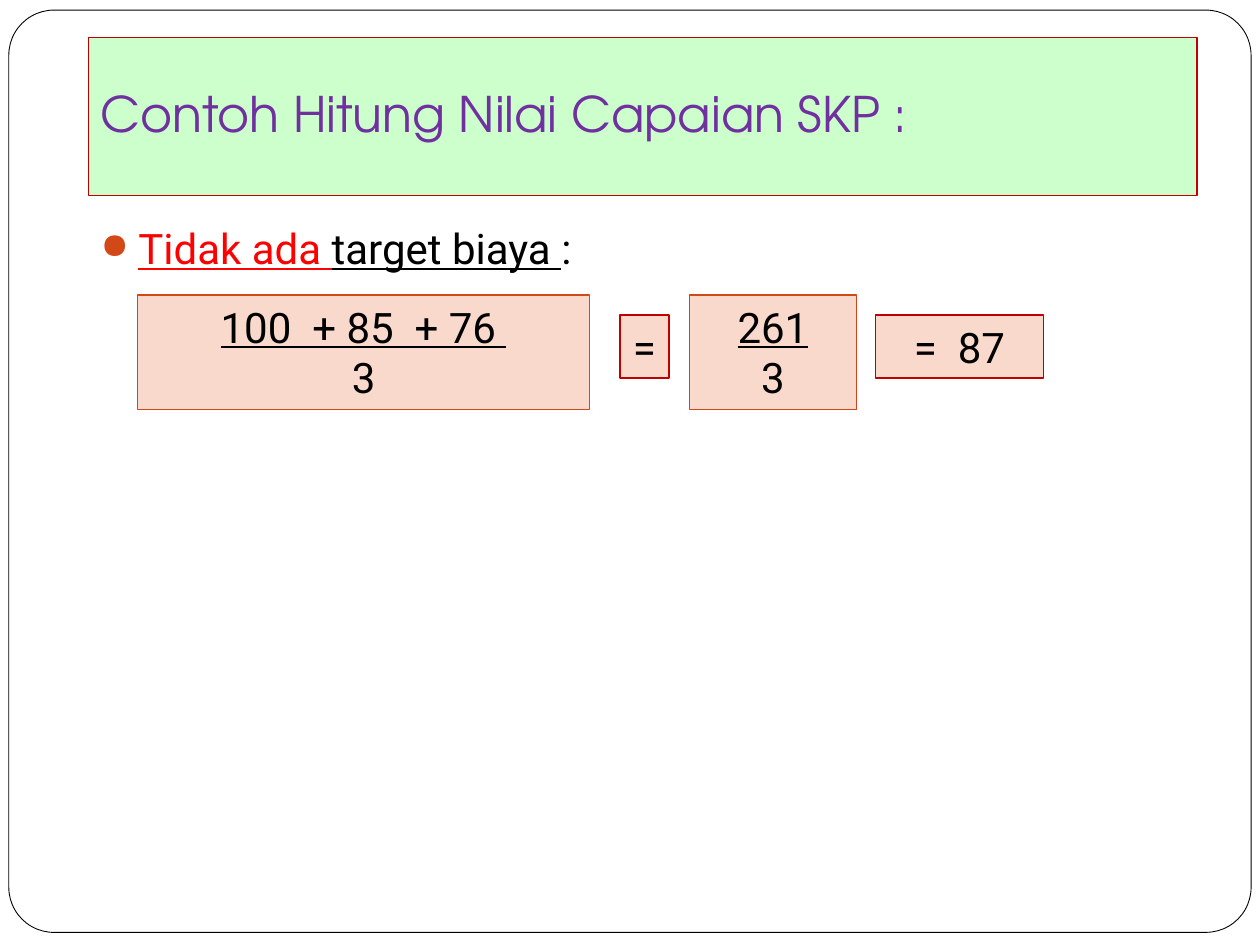
"""Build the slide that works out an SKP score without a cost target."""
from dataclasses import dataclass

from lxml import etree
from pptx import Presentation
from pptx.dml.color import RGBColor
from pptx.enum import shapes, text
from pptx.oxml import ns
from pptx.util import Pt

INK = {"white": "FFFFFF", "black": "000000", "mint": "CCFFCC", "wine": "C00000",
       "plum": "7030A0", "peach": "FAD9CD", "rust": "D34817", "red": "FF0000"}
SANS, HEAD = "Roboto", "TeX Gyre Adventor"


@dataclass
class Box:
    left: float
    top: float
    width: float
    height: float
    fill: str
    edge: str
    words: str = ""
    line: float = 0.75
    kind: int = shapes.MSO_SHAPE.RECTANGLE


def rgb(name: str) -> RGBColor:
    """Return the named colour."""
    return RGBColor.from_string(INK[name])


def style(run, size: float, ink: str, face: str = SANS, under: bool = False) -> None:
    """Set the look of one run."""
    font = run.font
    font.size, font.name, font.underline = Pt(size), face, under
    font.color.rgb = rgb(ink)


def draw(slide, box: Box):
    """Draw a filled, outlined box and return its shape."""
    shape = slide.shapes.add_shape(
        box.kind, Pt(box.left), Pt(box.top), Pt(box.width), Pt(box.height))
    shape.shadow.inherit = False
    shape.fill.solid()
    shape.fill.fore_color.rgb = rgb(box.fill)
    shape.line.color.rgb = rgb(box.edge)
    shape.line.width = Pt(box.line)
    return shape


def term(slide, box: Box) -> None:
    """Draw one term; a term of two lines is a fraction with a ruled top."""
    frame = draw(slide, box).text_frame
    frame.word_wrap = True
    frame.text = box.words
    split = len(frame.paragraphs) > 1
    frame.vertical_anchor = text.MSO_ANCHOR.TOP if split else text.MSO_ANCHOR.MIDDLE
    for row, para in enumerate(frame.paragraphs):
        para.alignment = text.PP_ALIGN.CENTER
        style(para.runs[0], 24, "black", under=split and row == 0)


def title(slide, box: Box) -> None:
    """Draw the title band."""
    frame = draw(slide, box).text_frame
    frame.word_wrap = True
    frame.margin_bottom = Pt(7.2)
    frame.vertical_anchor = text.MSO_ANCHOR.MIDDLE
    frame.text = box.words
    para = frame.paragraphs[0]
    para.alignment = text.PP_ALIGN.LEFT
    style(para.runs[0], 28, "plum", HEAD)


def bullet(para, ink: str, size: int, indent: float) -> None:
    """Give a paragraph a round bullet with a hanging indent."""
    props = para._p.get_or_add_pPr()
    props.set("marL", str(Pt(indent)))
    props.set("indent", str(-Pt(indent)))
    tint = etree.SubElement(props, ns.qn("a:buClr"))
    etree.SubElement(tint, ns.qn("a:srgbClr"), val=INK[ink])
    etree.SubElement(props, ns.qn("a:buSzPct"), val=str(size * 1000))
    etree.SubElement(props, ns.qn("a:buChar"), char="●")


def lead(slide) -> None:
    """Write the bulleted line that names the case."""
    frame = slide.shapes.add_textbox(Pt(50.4), Pt(123.84), Pt(639.36), Pt(38.16)).text_frame
    frame.word_wrap = True
    para = frame.paragraphs[0]
    para.space_before = Pt(5.8)
    bullet(para, "rust", 85, 21.6)
    for words, ink, under in (("Tidak ada ", "red", True),
                              ("target biaya ", "black", True),
                              (":", "black", False)):
        run = para.add_run()
        run.text = words
        style(run, 24, ink, under=under)


def main() -> None:
    """Build and save the slide."""
    deck = Presentation()
    deck.slide_width, deck.slide_height = Pt(720), Pt(540)
    slide = deck.slides.add_slide(deck.slide_layouts[6])
    frame = draw(slide, Box(5.04, 5.76, 709.92, 527.04, "white", "black", line=0.5,
                            kind=shapes.MSO_SHAPE.ROUNDED_RECTANGLE))
    frame.adjustments[0] = 0.049
    title(slide, Box(50.4, 21.6, 633.6, 90, "mint", "wine",
                     "Contoh Hitung Nilai Capaian SKP :"))
    lead(slide)
    for left, width, words in ((78.48, 258.48, "100  + 85  + 76 \n3"),
                               (354.24, 28.08, "="),
                               (393.84, 95.76, "261\n3"),
                               (500.4, 95.76, "=  87")):
        top, height, edge = (168.48, 65.52, "rust") if "\n" in words else (180, 36, "wine")
        term(slide, Box(left, top, width, height, "peach", edge, words))
    deck.save("out.pptx")


if __name__ == "__main__":
    main()
